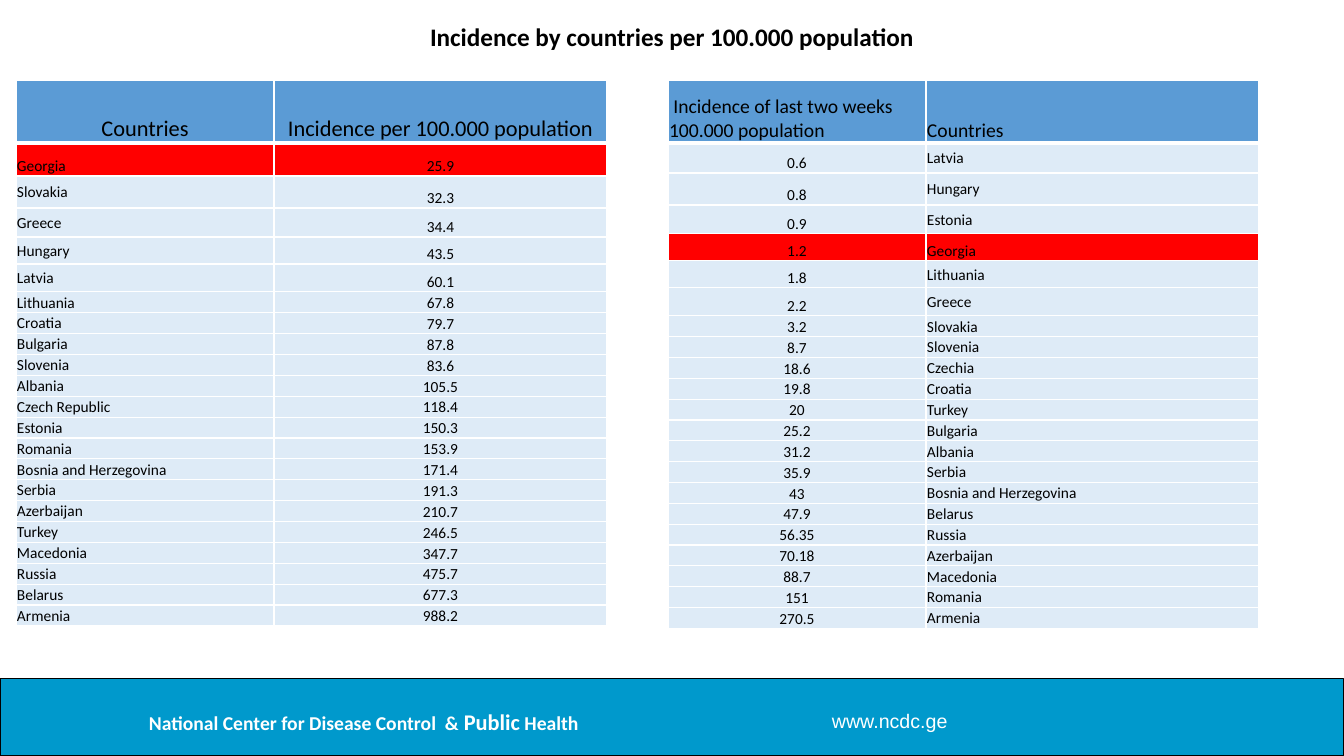
from lxml import etree
from pptx import Presentation
from pptx import util as u
from pptx.dml.color import RGBColor
from pptx.enum import shapes, text
from pptx.oxml.ns import qn

PX = 914400 / 100.8
THEME = {
    "font": "Calibri", "url_font": "Arial",
    "ink": "000000", "white": "FFFFFF", "bar": "0099CC",
    "head": "5B9BD5", "body": "DEEBF7", "mark": "FF0000",
    "title": 18, "head_left": 16, "head_right": 14, "cell": 11,
    "footer": 14, "footer_big": 16,
}
LEFT, CENTER = text.PP_ALIGN.LEFT, text.PP_ALIGN.CENTER
BOTTOM, MIDDLE = text.MSO_ANCHOR.BOTTOM, text.MSO_ANCHOR.MIDDLE


def px(n):
    return u.Emu(round(n * PX))


def write(tf, runs, color="ink", font="font", bold=False, align=LEFT):
    """Fill the first paragraph with (words, size name) runs."""
    p = tf.paragraphs[0]
    p.alignment = align
    for words, size in runs:
        r = p.add_run()
        r.text = words
        r.font.name = THEME[font]
        r.font.size = u.Pt(THEME[size])
        r.font.bold = bold
        r.font.color.rgb = RGBColor.from_string(THEME[color])


prs = Presentation()
prs.slide_width, prs.slide_height = px(1344), px(756)
s = prs.slides.add_slide(prs.slide_layouts[6])

# Table data
by_total = [
    ("Georgia", "25.9"), ("Slovakia", "32.3"), ("Greece", "34.4"),
    ("Hungary", "43.5"), ("Latvia", "60.1"), ("Lithuania", "67.8"),
    ("Croatia", "79.7"), ("Bulgaria", "87.8"), ("Slovenia", "83.6"),
    ("Albania", "105.5"), ("Czech Republic", "118.4"), ("Estonia", "150.3"),
    ("Romania", "153.9"), ("Bosnia and Herzegovina", "171.4"),
    ("Serbia", "191.3"), ("Azerbaijan", "210.7"), ("Turkey", "246.5"),
    ("Macedonia", "347.7"), ("Russia", "475.7"), ("Belarus", "677.3"),
    ("Armenia", "988.2"),
]
by_two_weeks = [
    ("0.6", "Latvia"), ("0.8", "Hungary"), ("0.9", "Estonia"),
    ("1.2", "Georgia"), ("1.8", "Lithuania"), ("2.2", "Greece"),
    ("3.2", "Slovakia"), ("8.7", "Slovenia"), ("18.6", "Czechia"),
    ("19.8", "Croatia"), ("20", "Turkey"), ("25.2", "Bulgaria"),
    ("31.2", "Albania"), ("35.9", "Serbia"), ("43", "Bosnia and Herzegovina"),
    ("47.9", "Belarus"), ("56.35", "Russia"), ("70.18", "Azerbaijan"),
    ("88.7", "Macedonia"), ("151", "Romania"), ("270.5", "Armenia"),
]
# left, height, tall rows, country column, header size, header alignment, rows
tables = [
    (16, 546, [63, 33, 32, 29, 27, 28], 0, "head_left", CENTER,
     [("Countries", "Incidence per 100.000 population")] + by_total),
    (668, 549, [63, 30, 32, 29, 27, 27, 28], 1, "head_right", LEFT,
     [(" Incidence of last two weeks 100.000 population", "Countries")] + by_two_weeks),
]

# Tables
for left, height, tall, country, head_size, head_align, rows in tables:
    tb = s.shapes.add_table(len(rows), 2, px(left), px(80), px(591), px(height)).table
    tb.first_row = tb.horz_banding = False
    tb.columns[0].width, tb.columns[1].width = px(258), px(333)
    # Rows after the tall ones share the remaining height
    small = (height - sum(tall)) / (len(rows) - len(tall))
    for i, row in enumerate(rows):
        tb.rows[i].height = px(tall[i] if i < len(tall) else small)
        marked = "Georgia" in row
        for j, words in enumerate(row):
            cell = tb.cell(i, j)
            cell.margin_left = cell.margin_right = cell.margin_top = px(1)
            cell.margin_bottom = 0
            is_name = i > 0 and j == country
            cell.vertical_anchor = MIDDLE if is_name and not marked else BOTTOM
            align = head_align if i == 0 else LEFT if is_name else CENTER
            write(cell.text_frame, [(words, "cell" if i else head_size)], align=align)
            # White borders, heavier under the header
            pr = cell._tc.get_or_add_tcPr()
            for side in "LRTB":
                heavy = (i, side) in ((0, "B"), (1, "T"))
                ln = etree.SubElement(pr, qn("a:ln" + side), w=str(u.Pt(3 if heavy else 1)))
                fill = etree.SubElement(ln, qn("a:solidFill"))
                etree.SubElement(fill, qn("a:srgbClr"), val=THEME["white"])
            cell.fill.solid()
            kind = "head" if i == 0 else "mark" if marked else "body"
            cell.fill.fore_color.rgb = RGBColor.from_string(THEME[kind])

# Footer bar
sp = s.shapes.add_shape(shapes.MSO_SHAPE.RECTANGLE, 0, px(679), px(1344), px(77))
sp.shadow.inherit = False
sp.fill.solid()
sp.fill.fore_color.rgb = RGBColor.from_string(THEME["bar"])
sp.line.color.rgb = RGBColor.from_string(THEME["ink"])
sp.line.width = u.Pt(0.75)

# Title and footer texts
labels = [
    ((261, 16, 822, 40), [("Incidence by countries per 100.000 population", "title")],
     "ink", "font", True, CENTER),
    ((139, 703, 778, 37), [("National Center for Disease Control  & ", "footer"),
                           ("Public", "footer_big"), (" Health", "footer")],
     "white", "font", True, LEFT),
    ((822, 704, 182, 34), [("www.ncdc.ge", "footer")],
     "white", "url_font", False, LEFT),
]
for box, runs, color, font, bold, align in labels:
    tf = s.shapes.add_textbox(*map(px, box)).text_frame
    tf.word_wrap = True
    write(tf, runs, color, font, bold, align)

prs.save("out.pptx")
